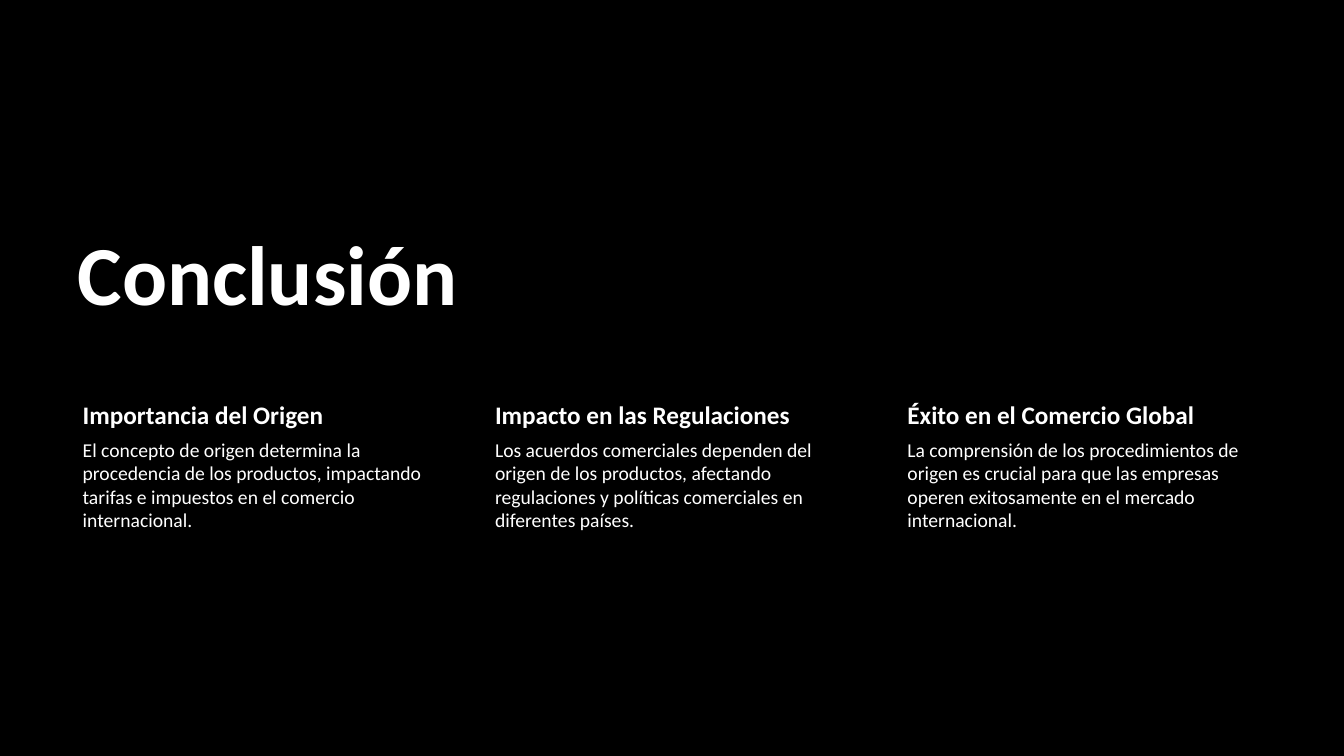
from dataclasses import dataclass

from pptx import Presentation
from pptx.dml.color import RGBColor
from pptx.enum.text import MSO_ANCHOR, MSO_AUTO_SIZE, PP_ALIGN
from pptx.shapes.base import BaseShape
from pptx.slide import Slide
from pptx.util import Inches, Pt


@dataclass(frozen=True)
class Theme:
    font: str = "Calibri"
    background: RGBColor = RGBColor(0, 0, 0)
    text: RGBColor = RGBColor(255, 255, 255)
    title_size: int = 60
    heading_size: int = 18
    body_size: int = 14


@dataclass(frozen=True)
class Conclusion:
    heading: str
    body: str


THEME = Theme()
LEFT = 0.67
COLUMN_PITCH = 4.09
COLUMN_WIDTH = 3.72
HEADING_TOP = 3.93
HEADING_HEIGHT = 0.39
BODY_HEIGHT = 2.33

CONCLUSIONS = (
    Conclusion(
        "Importancia del Origen",
        "El concepto de origen determina la procedencia de los productos, "
        "impactando tarifas e impuestos en el comercio internacional.",
    ),
    Conclusion(
        "Impacto en las Regulaciones",
        "Los acuerdos comerciales dependen del origen de los productos, "
        "afectando regulaciones y políticas comerciales en diferentes países.",
    ),
    Conclusion(
        "Éxito en el Comercio Global",
        "La comprensión de los procedimientos de origen es crucial para que las "
        "empresas operen exitosamente en el mercado internacional.",
    ),
)


def write_text(
    shape: BaseShape,
    text: str,
    *,
    size: int,
    bold: bool = False,
    anchor: MSO_ANCHOR = MSO_ANCHOR.TOP,
    line_spacing: float = 1.0,
    left_inset: float = 0.1,
    inset: float = 0.05,
) -> None:
    """Fill a shape with one formatted paragraph."""
    frame = shape.text_frame
    frame.word_wrap = True
    frame.auto_size = MSO_AUTO_SIZE.NONE
    frame.vertical_anchor = anchor
    frame.margin_left = Inches(left_inset)
    frame.margin_top = frame.margin_right = frame.margin_bottom = Inches(inset)
    paragraph = frame.paragraphs[0]
    paragraph.alignment = PP_ALIGN.LEFT
    paragraph.line_spacing = line_spacing
    run = paragraph.add_run()
    run.text = text
    run.font.name = THEME.font
    run.font.size = Pt(size)
    run.font.bold = bold
    run.font.color.rgb = THEME.text


def add_title(slide: Slide, text: str) -> None:
    """Place and fill the title placeholder."""
    title = slide.shapes.title
    title.left, title.top = Inches(LEFT), Inches(2.02)
    title.width, title.height = Inches(8.03), Inches(1.24)
    write_text(title, text, size=THEME.title_size, bold=True,
               anchor=MSO_ANCHOR.BOTTOM, line_spacing=0.9)


def add_conclusion(slide: Slide, conclusion: Conclusion, left: float) -> None:
    """Draw one column with its heading and body."""
    heading = slide.shapes.add_textbox(
        Inches(left), Inches(HEADING_TOP), Inches(COLUMN_WIDTH), Inches(HEADING_HEIGHT)
    )
    write_text(heading, conclusion.heading, size=THEME.heading_size, bold=True,
               left_inset=0.15, inset=0.03)
    body = slide.shapes.add_textbox(
        Inches(left), Inches(HEADING_TOP + HEADING_HEIGHT),
        Inches(COLUMN_WIDTH), Inches(BODY_HEIGHT),
    )
    write_text(body, conclusion.body, size=THEME.body_size, left_inset=0.15, inset=0.02)


def main() -> None:
    """Build and save the conclusion slide."""
    presentation = Presentation()
    presentation.slide_width = Inches(13.33)
    presentation.slide_height = Inches(7.5)
    slide = presentation.slides.add_slide(presentation.slide_layouts.get_by_name("Title Only"))
    slide.background.fill.solid()
    slide.background.fill.fore_color.rgb = THEME.background
    add_title(slide, "Conclusión")
    for index, conclusion in enumerate(CONCLUSIONS):
        add_conclusion(slide, conclusion, LEFT + index * COLUMN_PITCH)
    presentation.save("out.pptx")


if __name__ == "__main__":
    main()
